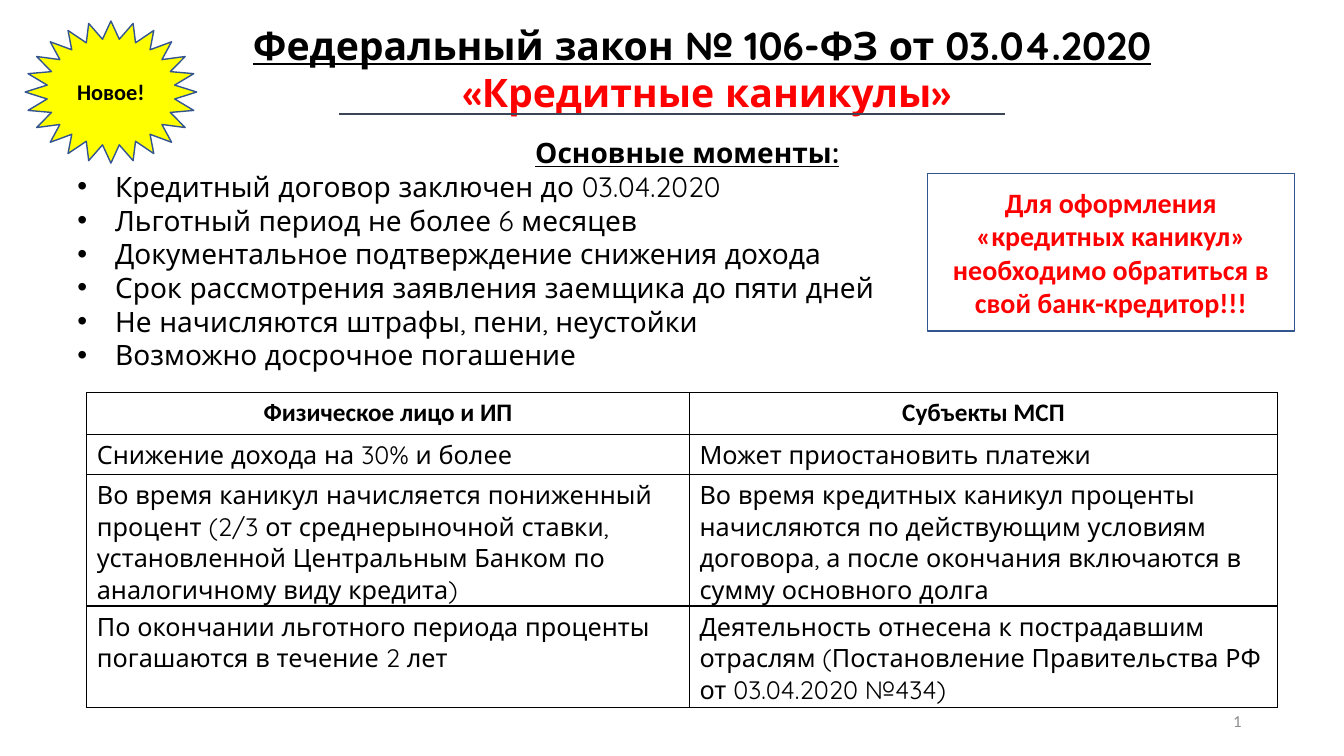
from lxml.etree import SubElement
from pptx import Presentation
from pptx.dml.color import RGBColor
from pptx.enum.shapes import MSO_CONNECTOR, MSO_SHAPE
from pptx.enum.text import MSO_ANCHOR, MSO_AUTO_SIZE, PP_ALIGN
from pptx.oxml.ns import qn
from pptx.util import Pt

COLORS = {"black": "000000", "red": "FF0000", "yellow": "FFFF00",
          "blue": "325491", "slate": "3B4555", "gray": "8C8C8C"}
HEADING_FONT = "Quicksand"
BODY_FONT = "Calibri"

KEY_POINTS = [
    "Кредитный договор заключен до 03.04.2020",
    "Льготный период не более 6 месяцев",
    "Документальное подтверждение снижения дохода",
    "Срок рассмотрения заявления заемщика до пяти дней",
    "Не начисляются штрафы, пени, неустойки",
    "Возможно досрочное погашение",
]
TERMS = [
    ("Физическое лицо и ИП", "Субъекты МСП"),
    ("Снижение дохода на 30% и более", "Может приостановить платежи"),
    ("Во время каникул начисляется пониженный процент (2/3 от среднерыночной ставки, "
     "установленной Центральным Банком по аналогичному виду кредита)",
     "Во время кредитных каникул проценты начисляются по действующим условиям договора, "
     "а после окончания включаются в сумму основного долга"),
    ("По окончании льготного периода проценты погашаются в течение 2 лет",
     "Деятельность отнесена к пострадавшим отраслям (Постановление Правительства РФ "
     "от 03.04.2020 №434)"),
]
COLUMN_WIDTHS = [430.5, 420]
ROW_HEIGHTS = [30, 28.5, 93.5, 72.5]


def rgb(name):
    return RGBColor.from_string(COLORS[name])


def style_font(font, size, face, color="black", bold=False, underline=False):
    font.size = Pt(size)
    font.name = face
    font.bold = bold
    font.underline = underline
    font.color.rgb = rgb(color)


def write(paragraph, text, align=PP_ALIGN.LEFT, **style):
    paragraph.alignment = align
    paragraph.space_before = Pt(0)
    run = paragraph.add_run()
    run.text = text
    style_font(run.font, **style)


def place(part, left, top, width, height):
    part.left, part.top = Pt(left), Pt(top)
    part.width, part.height = Pt(width), Pt(height)
    frame = part.text_frame
    frame.word_wrap = True
    frame.auto_size = MSO_AUTO_SIZE.NONE
    frame.vertical_anchor = MSO_ANCHOR.TOP
    frame.margin_left = frame.margin_right = Pt(7.2)
    frame.margin_top = frame.margin_bottom = Pt(3.6)
    return frame


def set_bullet(paragraph, char=None, indent=0):
    properties = paragraph._p.get_or_add_pPr()
    properties.set("marL", str(Pt(indent)))
    properties.set("indent", str(-Pt(indent)))
    if char:
        SubElement(properties, qn("a:buFont"), typeface="Arial")
        SubElement(properties, qn("a:buChar"), char=char)
    else:
        SubElement(properties, qn("a:buNone"))


def add_title(slide):
    frame = place(slide.shapes.title, 58.5, 11.5, 886, 75)
    style = {"align": PP_ALIGN.CENTER, "face": HEADING_FONT, "bold": True}
    write(frame.paragraphs[0], "Федеральный закон № 106-ФЗ от 03.04.2020",
          size=28, underline=True, **style)
    subtitle = frame.add_paragraph()
    write(subtitle, " ", size=24, color="red", **style)
    write(subtitle, "«Кредитные каникулы»", size=28, color="red", **style)


def add_key_points(slide):
    frame = place(slide.placeholders[1], 48, 93.5, 886, 177)
    heading = frame.paragraphs[0]
    write(heading, "Основные моменты:", align=PP_ALIGN.CENTER, size=20,
          face=HEADING_FONT, bold=True, underline=True)
    set_bullet(heading)
    for point in KEY_POINTS:
        paragraph = frame.add_paragraph()
        write(paragraph, point, size=20, face=HEADING_FONT)
        set_bullet(paragraph, "•", 27)


def add_rule(slide, left, right, y):
    rule = slide.shapes.add_connector(
        MSO_CONNECTOR.STRAIGHT, Pt(left), Pt(y), Pt(right), Pt(y))
    rule.line.color.rgb = rgb("slate")
    rule.line.width = Pt(1)
    SubElement(rule._element.spPr, qn("a:effectLst"))


def add_callout(slide, preset, box, text, fill=None, **style):
    callout = slide.shapes.add_shape(preset, *map(Pt, box))
    callout.shadow.inherit = False
    if fill:
        callout.fill.solid()
        callout.fill.fore_color.rgb = rgb(fill)
    else:
        callout.fill.background()
    callout.line.color.rgb = rgb("blue")
    callout.line.width = Pt(1)
    frame = callout.text_frame
    frame.word_wrap = True
    frame.vertical_anchor = MSO_ANCHOR.MIDDLE
    write(frame.paragraphs[0], text, align=PP_ALIGN.CENTER,
          face=BODY_FONT, bold=True, **style)


def set_borders(cell):
    properties = cell._tc.get_or_add_tcPr()
    for position, side in enumerate(("a:lnL", "a:lnR", "a:lnT", "a:lnB")):
        border = properties.makeelement(qn(side), {"w": str(Pt(1))})
        fill = SubElement(border, qn("a:solidFill"))
        SubElement(fill, qn("a:srgbClr"), val=COLORS["black"])
        properties.insert(position, border)


def add_terms_table(slide):
    table = slide.shapes.add_table(
        len(TERMS), len(COLUMN_WIDTHS), Pt(62), Pt(280.5),
        Pt(sum(COLUMN_WIDTHS)), Pt(sum(ROW_HEIGHTS))).table
    table.first_row = table.horz_banding = False
    for column, width in zip(table.columns, COLUMN_WIDTHS):
        column.width = Pt(width)
    for index, (row, height, texts) in enumerate(zip(table.rows, ROW_HEIGHTS, TERMS)):
        row.height = Pt(height)
        header = index == 0
        for cell, text in zip(row.cells, texts):
            cell.fill.background()
            cell.margin_top, cell.margin_bottom = Pt(3.6), Pt(0)
            write(cell.text_frame.paragraphs[0], text,
                  align=PP_ALIGN.CENTER if header else PP_ALIGN.LEFT, size=18,
                  face=BODY_FONT if header else HEADING_FONT, bold=header)
            set_borders(cell)


def add_page_number(slide):
    number = slide.shapes.add_textbox(Pt(678), Pt(500.5), Pt(216), Pt(29))
    frame = place(number, 678, 500.5, 216, 29)
    frame.vertical_anchor = MSO_ANCHOR.MIDDLE
    write(frame.paragraphs[0], "1", align=PP_ALIGN.RIGHT, size=12,
          face=BODY_FONT, color="gray")


def main():
    deck = Presentation()
    deck.slide_width, deck.slide_height = Pt(960), Pt(540)
    slide = deck.slides.add_slide(deck.slide_layouts[1])
    add_title(slide)
    add_rule(slide, 242.5, 718, 81.5)
    add_key_points(slide)
    add_callout(slide, MSO_SHAPE.RECTANGLE, (662.5, 124, 262, 112.5),
                "Для оформления «кредитных каникул» необходимо обратиться в свой "
                "банк-кредитор!!!", size=20, color="red")
    add_terms_table(slide)
    add_page_number(slide)
    add_callout(slide, MSO_SHAPE.STAR_24_POINT, (18, 15, 122.5, 101.5), "Новое!",
                fill="yellow", size=16)
    deck.save("out.pptx")


if __name__ == "__main__":
    main()
